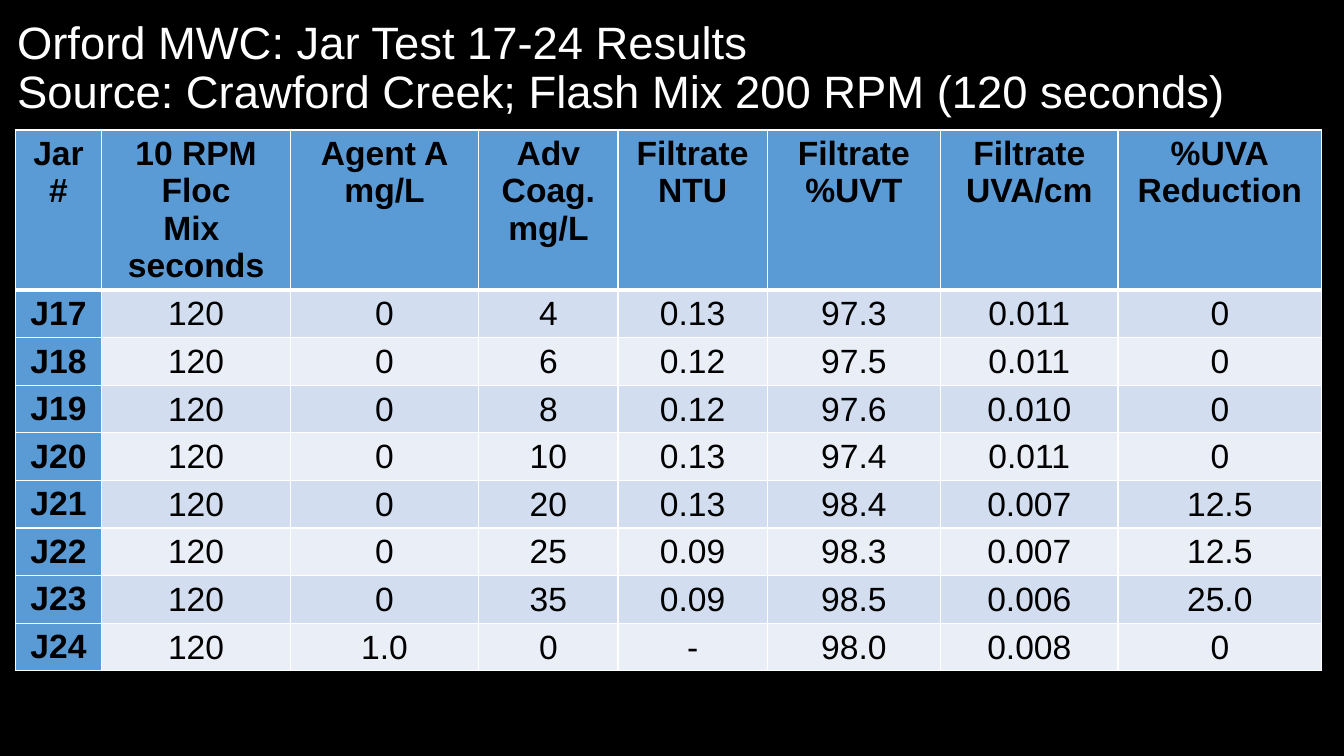
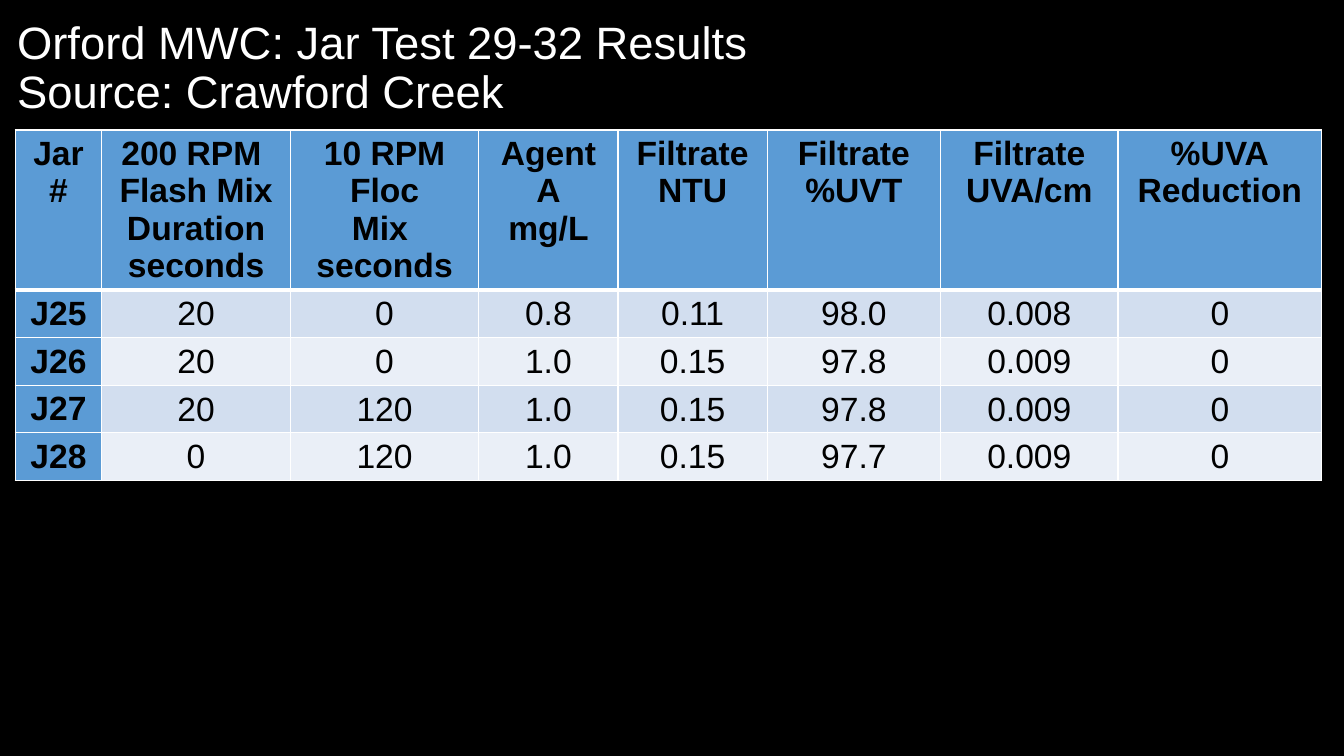
"""Build two slides of jar test results, each a title over a banded table."""
from lxml.etree import SubElement
from pptx import Presentation
from pptx.dml.color import RGBColor
from pptx.enum.text import MSO_ANCHOR, MSO_AUTO_SIZE, PP_ALIGN
from pptx.oxml.ns import qn
from pptx.util import Inches, Pt

COLORS = {
    "background": "000000",
    "title": "FFFFFF",
    "text": "000000",
    "border": "FFFFFF",
    "header": "5B9BD5",
    "odd": "D2DEEF",
    "even": "EAEFF7",
}
FONT = "Arial"
COLUMN_WIDTHS = [0.86, 1.87, 1.87, 1.38, 1.48, 1.72, 1.76, 2.02]
HEADER_HEIGHT = 1.58
ROW_HEIGHT = 0.47
FLOC_HEADER = "10 RPM\nFloc\nMix \nseconds"
FILTRATE_HEADERS = ["Filtrate\nNTU", "Filtrate\n%UVT", "Filtrate\nUVA/cm", "%UVA\nReduction"]

SLIDES = [
    {
        "title": [
            "Orford MWC: Jar Test 17-24 Results",
            "Source: Crawford Creek; Flash Mix 200 RPM (120 seconds)",
        ],
        "headers": ["Jar\n#", FLOC_HEADER, "Agent A\nmg/L", "Adv\nCoag.\nmg/L"],
        "rows": [
            ["J17", "120", "0", "4", "0.13", "97.3", "0.011", "0"],
            ["J18", "120", "0", "6", "0.12", "97.5", "0.011", "0"],
            ["J19", "120", "0", "8", "0.12", "97.6", "0.010", "0"],
            ["J20", "120", "0", "10", "0.13", "97.4", "0.011", "0"],
            ["J21", "120", "0", "20", "0.13", "98.4", "0.007", "12.5"],
            ["J22", "120", "0", "25", "0.09", "98.3", "0.007", "12.5"],
            ["J23", "120", "0", "35", "0.09", "98.5", "0.006", "25.0"],
            ["J24", "120", "1.0", "0", "-", "98.0", "0.008", "0"],
        ],
    },
    {
        "title": ["Orford MWC: Jar Test 29-32 Results", "Source: Crawford Creek"],
        "headers": ["Jar\n#", "200 RPM \nFlash Mix\nDuration\nseconds", FLOC_HEADER, "Agent A\nmg/L"],
        "rows": [
            ["J25", "20", "0", "0.8", "0.11", "98.0", "0.008", "0"],
            ["J26", "20", "0", "1.0", "0.15", "97.8", "0.009", "0"],
            ["J27", "20", "120", "1.0", "0.15", "97.8", "0.009", "0"],
            ["J28", "0", "120", "1.0", "0.15", "97.7", "0.009", "0"],
        ],
    },
]


def add_run(paragraph, text, size, color, bold=False):
    """Append one formatted run to a paragraph."""
    run = paragraph.add_run()
    run.text = text
    run.font.name = FONT
    run.font.size = Pt(size)
    run.font.bold = bold
    run.font.color.rgb = RGBColor.from_string(COLORS[color])


def set_borders(cell, top, bottom):
    """Draw the four borders of a cell, with top and bottom widths in points."""
    properties = cell._tc.get_or_add_tcPr()
    for side, width in (("lnL", 1), ("lnR", 1), ("lnT", top), ("lnB", bottom)):
        line = SubElement(properties, qn(f"a:{side}"), w=str(Pt(width)))
        fill = SubElement(line, qn("a:solidFill"))
        SubElement(fill, qn("a:srgbClr"), val=COLORS["border"])


presentation = Presentation()
presentation.slide_width = Inches(13.33)
presentation.slide_height = Inches(7.5)
background = presentation.slide_master.background.fill
background.solid()
background.fore_color.rgb = RGBColor.from_string(COLORS["background"])
title_only = presentation.slide_layouts.get_by_name("Title Only")

for content in SLIDES:
    slide = presentation.slides.add_slide(title_only)

    title = slide.shapes.title
    title.left, title.top = Inches(0.07), Inches(0.12)
    title.width, title.height = Inches(13.03), Inches(1.14)
    title.text_frame.auto_size = MSO_AUTO_SIZE.NONE
    title.text_frame.vertical_anchor = MSO_ANCHOR.MIDDLE
    paragraph = title.text_frame.paragraphs[0]
    paragraph.alignment = PP_ALIGN.LEFT
    paragraph.line_spacing = 0.9
    for index, line_text in enumerate(content["title"]):
        if index:
            paragraph.add_line_break()
        add_run(paragraph, line_text, 32.4, "title")

    table_rows = [content["headers"] + FILTRATE_HEADERS] + content["rows"]
    height = HEADER_HEIGHT + ROW_HEIGHT * len(content["rows"])
    table = slide.shapes.add_table(
        len(table_rows), len(COLUMN_WIDTHS),
        Inches(0.15), Inches(1.29), Inches(sum(COLUMN_WIDTHS)), Inches(height),
    ).table
    table.first_col = True
    for column, width in zip(table.columns, COLUMN_WIDTHS):
        column.width = Inches(width)

    for row_index, values in enumerate(table_rows):
        table.rows[row_index].height = Inches(ROW_HEIGHT if row_index else HEADER_HEIGHT)
        for column_index, value in enumerate(values):
            cell = table.cell(row_index, column_index)
            is_header = row_index == 0 or column_index == 0
            set_borders(cell, 3 if row_index == 1 else 1, 3 if row_index == 0 else 1)
            band = "header" if is_header else "odd" if row_index % 2 else "even"
            cell.fill.solid()
            cell.fill.fore_color.rgb = RGBColor.from_string(COLORS[band])
            if not is_header:
                cell.vertical_anchor = MSO_ANCHOR.MIDDLE
                cell.margin_left = cell.margin_right = cell.margin_top = Inches(0.01)
                cell.margin_bottom = 0
            for index, line_text in enumerate(value.split("\n")):
                frame = cell.text_frame
                paragraph = frame.add_paragraph() if index else frame.paragraphs[0]
                paragraph.alignment = PP_ALIGN.CENTER
                add_run(paragraph, line_text, 24, "text", is_header)

presentation.save("out.pptx")
